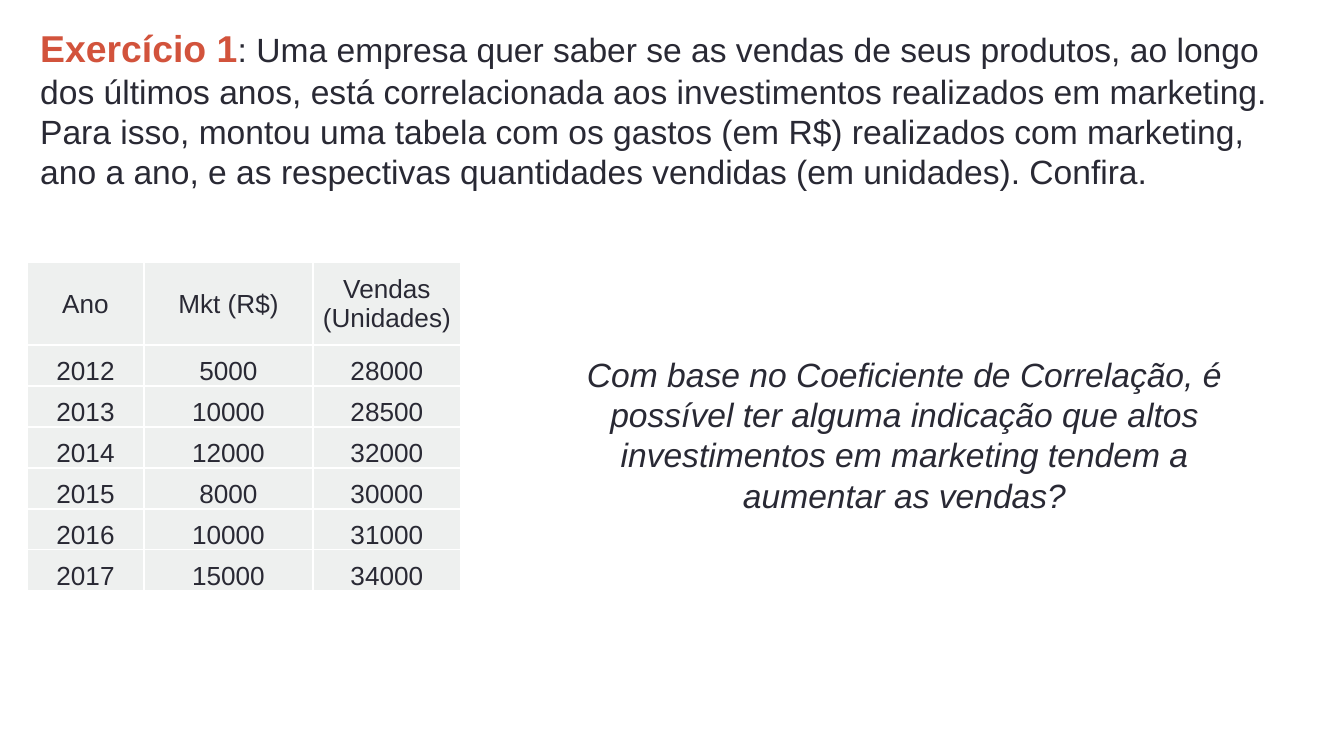
from lxml.etree import SubElement
from pptx import Presentation
from pptx.dml.color import RGBColor as RGB
from pptx.enum.text import MSO_ANCHOR as ANCHOR, PP_ALIGN as ALIGN
from pptx.oxml.ns import qn
from pptx.util import Emu, Pt

COLORS = {"text": "292934", "accent": "D2533C", "cell": "EEF0EF", "border": "FFFFFF"}
FONT = "Arial"

INTRO = [
    ("Exercício 1", dict(size=20, color="accent", bold=True)),
    (": Uma empresa quer saber se as vendas de seus produtos, ao longo dos "
     "últimos anos, está correlacionada aos investimentos realizados em "
     "marketing. Para isso, montou uma tabela com os gastos (em R$) realizados "
     "com marketing, ano a ano, e as respectivas quantidades vendidas (em "
     "unidades). Confira.", dict(size=18)),
]
QUERY = [
    ("Com base no Coeficiente de Correlação, é possível ter alguma indicação "
     "que altos investimentos em marketing tendem a aumentar as vendas?",
     dict(size=18, italic=True)),
]
HEAD = ("Ano", "Mkt (R$)", "Vendas (Unidades)")
SALES = [
    (2012, 5000, 28000),
    (2013, 10000, 28500),
    (2014, 12000, 32000),
    (2015, 8000, 30000),
    (2016, 10000, 31000),
    (2017, 15000, 34000),
]

# Lengths in px
SLIDE = (1344, 756)
INTRO_BOX = (27, 19, 1291, 181)
QUERY_BOX = (555, 347, 699, 176)
TABLE_AT = (27, 262)
COLS = (117, 169, 148)
HEAD_H, ROW_H = 83, 41
INSET = 1


def px(n):
    return Emu(round(n * 914400 / 134.4))


def style(run, size, color="text", bold=False, italic=False):
    font = run.font
    font.name, font.size = FONT, Pt(size)
    font.bold, font.italic = bold, italic
    font.color.rgb = RGB.from_string(COLORS[color])


def add_text(slide, box, parts, align):
    frame = slide.shapes.add_textbox(*map(px, box)).text_frame
    frame.word_wrap = True
    para = frame.paragraphs[0]
    para.alignment = align
    for text, look in parts:
        run = para.add_run()
        run.text = text
        style(run, **look)


def add_borders(cell):
    props = cell._tc.get_or_add_tcPr()
    for i, side in enumerate("LRTB"):
        line = SubElement(props, qn(f"a:ln{side}"), w=str(Pt(1)))
        fill = SubElement(line, qn("a:solidFill"))
        SubElement(fill, qn("a:srgbClr"), val=COLORS["border"])
        props.insert(i, line)  # borders come before the fill


def fill_cell(cell, text, anchor):
    cell.fill.solid()
    cell.fill.fore_color.rgb = RGB.from_string(COLORS["cell"])
    add_borders(cell)
    cell.margin_left = cell.margin_right = cell.margin_top = px(INSET)
    cell.margin_bottom = 0
    cell.vertical_anchor = anchor
    para = cell.text_frame.paragraphs[0]
    para.text = str(text)
    para.alignment = ALIGN.CENTER
    style(para.runs[0], 14)


def add_sales(slide):
    rows = [HEAD, *SALES]
    highs = [HEAD_H] + [ROW_H] * len(SALES)
    size = (sum(COLS), sum(highs))
    table = slide.shapes.add_table(
        len(rows), len(COLS), *map(px, TABLE_AT + size)).table
    for col, wide in zip(table.columns, COLS):
        col.width = px(wide)
    for r, (row, high) in enumerate(zip(rows, highs)):
        table.rows[r].height = px(high)
        anchor = ANCHOR.BOTTOM if r else ANCHOR.MIDDLE
        for c, text in enumerate(row):
            fill_cell(table.cell(r, c), text, anchor)


def main():
    deck = Presentation()
    deck.slide_width, deck.slide_height = map(px, SLIDE)
    slide = deck.slides.add_slide(deck.slide_layouts[6])
    add_text(slide, INTRO_BOX, INTRO, ALIGN.LEFT)
    add_sales(slide)
    add_text(slide, QUERY_BOX, QUERY, ALIGN.CENTER)
    deck.save("out.pptx")


if __name__ == "__main__":
    main()
